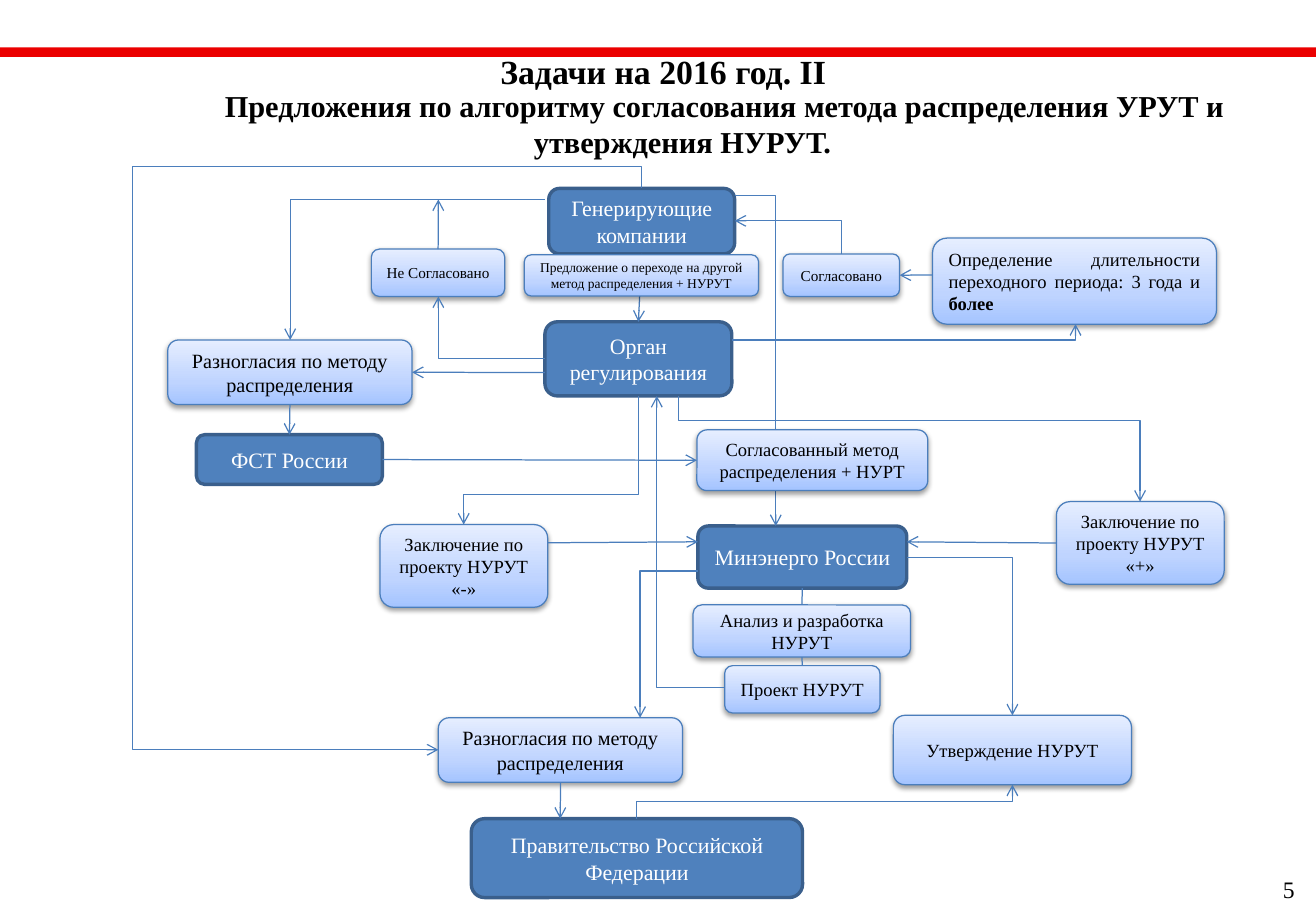
from copy import deepcopy
from dataclasses import dataclass

from lxml import etree
from pptx import Presentation
from pptx.dml.color import RGBColor
from pptx.enum.shapes import MSO_CONNECTOR, MSO_SHAPE
from pptx.enum.text import MSO_ANCHOR, PP_ALIGN
from pptx.oxml.ns import qn
from pptx.util import Cm, Pt

STRAIGHT, ELBOW = MSO_CONNECTOR.STRAIGHT, MSO_CONNECTOR.ELBOW
RECTANGLE, ROUNDED = MSO_SHAPE.RECTANGLE, MSO_SHAPE.ROUNDED_RECTANGLE
CENTER, JUSTIFY = PP_ALIGN.CENTER, PP_ALIGN.JUSTIFY
MIDDLE = MSO_ANCHOR.MIDDLE
TOP, LEFT, BOTTOM, RIGHT = range(4)


@dataclass(frozen=True)
class Theme:
    font: str = "Times New Roman"
    ink: str = "000000"
    band: str = "EB0000"
    body: str = "4F81BD"
    body_edge: str = "3A5F8C"
    body_ink: str = "FFFFFF"
    flow: str = "4B7EBC"
    step: tuple = ((0, "A4C4FF"), (0.35, "BFD4FF"), (1, "E6EEFF"))
    heading: int = 20
    subheading: int = 18
    number: int = 14
    body_size: int = 13
    large: int = 12
    normal: int = 11
    small: int = 9
    tiny: int = 8


def rgb(value):
    return RGBColor.from_string(value)


class Diagram:
    def __init__(self, slide, theme):
        self.shapes = slide.shapes
        self.theme = theme

    def caption(self, shape, text, size, color, bold=False, align=CENTER):
        frame = shape.text_frame
        frame.word_wrap = True
        frame.vertical_anchor = MIDDLE
        paragraph = frame.paragraphs[0]
        paragraph.text = text
        paragraph.alignment = align
        font = paragraph.font
        font.name, font.size, font.bold = self.theme.font, Pt(size), bold
        font.color.rgb = rgb(color)
        return paragraph

    def label(self, place, text, size, bold=False):
        box = self.shapes.add_textbox(*map(Cm, place))
        return self.caption(box, text, size, self.theme.ink, bold)

    def band(self, place):
        band = self.shapes.add_shape(RECTANGLE, *map(Cm, place))
        band.shadow.inherit = False
        band.fill.solid()
        band.fill.fore_color.rgb = rgb(self.theme.band)
        band.line.fill.background()

    def rounded(self, place, edge, width):
        box = self.shapes.add_shape(ROUNDED, *map(Cm, place))
        box.shadow.inherit = False
        box.line.color.rgb = rgb(edge)
        box.line.width = Pt(width)
        return box

    def body(self, place, text):
        box = self.rounded(place, self.theme.body_edge, 2)
        box.fill.solid()
        box.fill.fore_color.rgb = rgb(self.theme.body)
        self.caption(box, text, self.theme.body_size, self.theme.body_ink)
        return box

    def step(self, place, text, size, align=CENTER, strong=None):
        box = self.rounded(place, self.theme.flow, 0.75)
        box.fill.gradient()
        box.fill.gradient_angle = 90
        properties = box.element.spPr
        stops = properties.find(".//" + qn("a:gsLst"))
        stops.append(deepcopy(stops[0]))
        for stop, (position, color) in zip(box.fill.gradient_stops, self.theme.step):
            stop.position = position
            stop.color.rgb = rgb(color)
        shadow = etree.SubElement(
            properties.find(qn("a:effectLst")), qn("a:outerShdw"),
            blurRad="40000", dist="20000", dir="5400000", rotWithShape="0")
        black = etree.SubElement(shadow, qn("a:srgbClr"), val=self.theme.ink)
        etree.SubElement(black, qn("a:alpha"), val="38000")
        paragraph = self.caption(box, text, size, self.theme.ink, align=align)
        if strong:
            run = paragraph.add_run()
            run.text = strong
            run.font.bold = True
        return box

    def finish(self, connector, arrow):
        connector.line.color.rgb = rgb(self.theme.flow)
        connector.line.width = Pt(0.75)
        properties = connector.element.spPr
        if arrow:
            etree.SubElement(properties.find(qn("a:ln")), qn("a:tailEnd"), type="arrow")
        etree.SubElement(properties, qn("a:effectLst"))

    def straight(self, start, end, arrow=True):
        ends = [(0, 0) if hasattr(point[0], "text_frame") else point
                for point in (start, end)]
        connector = self.shapes.add_connector(STRAIGHT, *map(Cm, ends[0] + ends[1]))
        if start != ends[0]:
            connector.begin_connect(*start)
        if end != ends[1]:
            connector.end_connect(*end)
        self.finish(connector, arrow)

    def elbow(self, *route):
        start, end = route[0], route[-1]
        upright = int(start[0] == route[1][0])
        dx, dy = end[0] - start[0], end[1] - start[1]
        width, height = abs(dx), abs(dy)
        center = (start[0] + end[0]) / 2, (start[1] + end[1]) / 2
        if upright:
            width, height = height, width
            rotation = 90 if (dx > 0) == (dy < 0) else 270
            flips = {"flipH": dx > 0, "flipV": dy < 0}
        else:
            rotation = 180 if dx < 0 else 0
            flips = {"flipV": (dx < 0) != (dy < 0)}
        left, top = center[0] - width / 2, center[1] - height / 2
        connector = self.shapes.add_connector(
            ELBOW, *map(Cm, (left, top, left + width, top + height)))
        frame = connector.element.spPr.find(qn("a:xfrm"))
        frame.set("rot", str(rotation * 60000))
        for name, flipped in flips.items():
            if flipped:
                frame.set(name, "1")
        geometry = connector.element.spPr.find(qn("a:prstGeom"))
        geometry.set("prst", f"bentConnector{len(route) - 1}")
        guides = geometry.find(qn("a:avLst"))
        for index, corner in enumerate(route[1:-2]):
            axis = (upright + index) % 2
            share = (corner[axis] - start[axis]) / (end[axis] - start[axis])
            etree.SubElement(guides, qn("a:gd"), name=f"adj{index + 1}",
                             fmla=f"val {round(share * 100000)}")
        self.finish(connector, True)


def main():
    deck = Presentation()
    deck.slide_width, deck.slide_height = Cm(27.53), Cm(19.05)
    theme = Theme()
    d = Diagram(deck.slides.add_slide(deck.slide_layouts[6]), theme)

    d.band((0, 0.99, 27.53, 0.2))
    subtitle = d.label(
        (1.4, 1.68, 25.63, 1.8),
        "Предложения по алгоритму согласования метода распределения УРУТ и утверждения НУРУТ.",
        theme.subheading, True)
    indents = subtitle._p.get_or_add_pPr()
    indents.set("marL", str(Cm(0.13)))
    indents.set("indent", str(Cm(1.76)))
    d.label((10, 0.91, 7.75, 1.17), "Задачи на 2016 год. II", theme.heading, True)
    d.label((26.39, 18.03, 1.14, 1.12), "5", theme.number)

    generators = d.body((11.48, 3.94, 3.89, 1.37), "Генерирующие компании")
    regulator = d.body((11.4, 6.73, 3.91, 1.55), "Орган регулирования")
    ministry = d.body((14.6, 11, 4.37, 1.3), "Минэнерго России")
    tariffs = d.body((4.11, 9.09, 3.89, 1.04), "ФСТ России")
    d.body((9.86, 17.12, 6.93, 1.65), "Правительство Российской Федерации")

    d.straight((generators, BOTTOM), (regulator, TOP))
    d.elbow((15.37, 4.09), (16.23, 4.09), (16.23, 11))

    dispute = "Разногласия по методу распределения"
    conclusion = "Заключение по проекту НУРУТ\n"
    method_dispute = d.step((3.51, 7.11, 5.11, 1.35), dispute, theme.large)
    final_dispute = d.step((9.17, 15.01, 5.11, 1.35), dispute, theme.large)
    d.step((10.97, 5.33, 4.9, 0.86),
           "Предложение о переходе на другой метод распределения + НУРУТ", theme.tiny)
    d.step((19.51, 4.98, 5.94, 1.8),
           "Определение длительности переходного периода: 3 года и ",
           theme.normal, JUSTIFY, "более")
    analysis = d.step((14.5, 12.65, 4.55, 1.09), "Анализ и разработка НУРУТ", theme.normal)
    draft = d.step((15.16, 13.92, 3.25, 0.99), "Проект НУРУТ", theme.normal)
    agreed = d.step((16.38, 5.31, 2.44, 0.89), "Согласовано", theme.small)
    refused = d.step((7.77, 5.21, 2.79, 0.99), "Не Согласовано", theme.small)
    agreed_method = d.step((14.58, 8.99, 4.83, 1.27),
                           "Согласованный метод распределения + НУРТ", theme.normal)
    positive = d.step((22.1, 10.49, 3.51, 1.73), conclusion + "«+»", theme.normal)
    d.step((7.95, 10.97, 3.51, 1.73), conclusion + "«-»", theme.normal)
    d.step((18.69, 14.96, 4.98, 1.45), "Утверждение НУРУТ", theme.normal)

    d.straight((19.51, 5.75), (agreed, RIGHT))
    d.straight((11.4, 7.79), (method_dispute, RIGHT))
    d.straight((method_dispute, BOTTOM), (tariffs, TOP))
    d.straight((tariffs, RIGHT), (agreed_method, LEFT))
    d.straight((refused, TOP), (9.17, 4.17))
    d.straight((positive, LEFT), (18.97, 11.33))
    d.straight((11.46, 11.35), (14.6, 11.33))
    d.straight((final_dispute, BOTTOM), (11.72, 17.12))
    d.straight((ministry, BOTTOM), (analysis, TOP), arrow=False)
    d.straight((analysis, BOTTOM), (draft, TOP), arrow=False)

    d.elbow((13.42, 3.94), (13.42, 3.48), (2.77, 3.48), (2.77, 15.68), (9.17, 15.68))
    d.elbow((11.4, 4.17), (6.07, 4.17), (6.07, 7.11))
    d.elbow((11.4, 7.49), (9.17, 7.49), (9.17, 6.2))
    d.elbow((17.6, 5.31), (17.6, 4.62), (15.37, 4.62))
    d.elbow((15.31, 7.11), (22.5, 7.11), (22.5, 6.78))
    d.elbow((14.2, 8.28), (14.2, 8.79), (23.85, 8.79), (23.85, 10.49))
    d.elbow((13.36, 8.28), (13.36, 10.34), (9.7, 10.34), (9.7, 10.97))
    d.elbow((14.6, 11.94), (13.39, 11.94), (13.39, 15.01))
    d.elbow((15.16, 14.38), (13.74, 14.38), (13.74, 8.28))
    d.elbow((18.97, 11.66), (21.18, 11.66), (21.18, 14.96))
    d.elbow((13.31, 17.12), (13.31, 16.76), (21.18, 16.76), (21.18, 16.41))

    deck.save("out.pptx")


if __name__ == "__main__":
    main()
